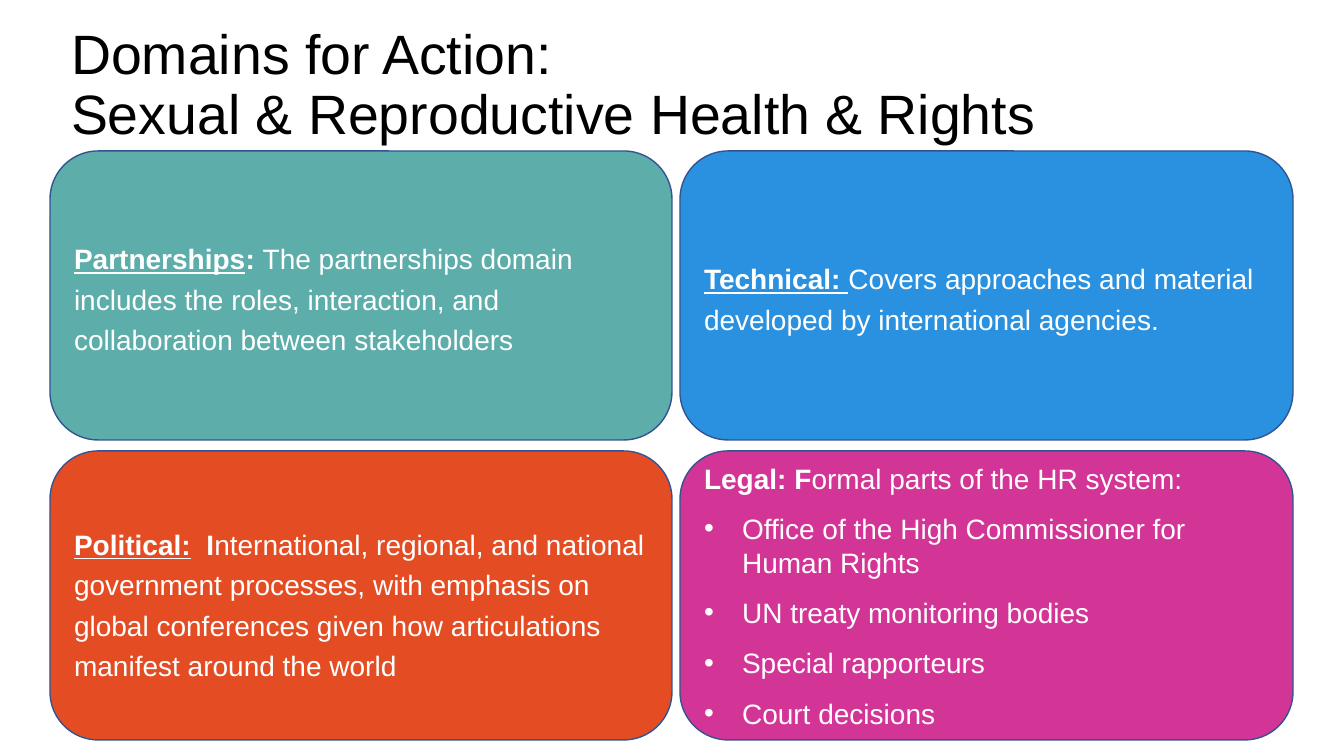
from lxml.etree import SubElement
from pptx import Presentation
from pptx.dml.color import RGBColor
from pptx.enum.shapes import MSO_SHAPE
from pptx.enum.text import MSO_ANCHOR, MSO_AUTO_SIZE, PP_ALIGN
from pptx.oxml.ns import qn
from pptx.util import Emu, Pt

PX = 914400 / 100.8
COLORS = {
    "black": "000000", "white": "FFFFFF", "edge": "325491",
    "teal": "5DADAB", "blue": "2991DF", "orange": "E44D24", "pink": "D33597",
}


def px(n):
    return Emu(round(n * PX))


def write(para, text, size=20, color="white", bold=False, under=False):
    run = para.add_run()
    run.text = text
    font = run.font
    font.name, font.size = "Arial", Pt(size)
    font.bold, font.underline = bold, under
    font.color.rgb = RGBColor.from_string(COLORS[color])


deck = Presentation()
deck.slide_width, deck.slide_height = px(1344), px(756)
slide = deck.slides.add_slide(deck.slide_layouts[5])

title = slide.shapes.title
title.left, title.top, title.width, title.height = px(61), px(16), px(1159), px(141)
frame = title.text_frame
frame.auto_size = MSO_AUTO_SIZE.NONE
frame.word_wrap = True
frame.vertical_anchor = MSO_ANCHOR.MIDDLE
head = frame.paragraphs[0]
head.alignment = PP_ALIGN.LEFT
head.line_spacing = 0.9
write(head, "Domains for Action: ", size=39.6, color="black")
head.add_line_break()
write(head, "Sexual & Reproductive Health & Rights", size=39.6, color="black")

# Each domain: fill, underlined lead, bold lead, plain text, bullets
domains = [
    ("teal", "Partnerships", ": ",
     "The partnerships domain includes the roles, interaction, "
     "and collaboration between stakeholders", []),
    ("blue", "Technical: ", "",
     "Covers approaches and material developed by international agencies.", []),
    ("orange", "Political:", "  I",
     "nternational, regional, and national government processes, with emphasis "
     "on global conferences given how articulations manifest around the world", []),
    ("pink", "", "Legal: F", "ormal parts of the HR system:",
     ["Office of the High Commissioner for Human Rights",
      "UN treaty monitoring bodies", "Special rapporteurs", "Court decisions"]),
]
cols = [(50, 622), (680, 613)]
TOP, HIGH, STEP = 151, 289, 300

for i, (fill, lead, bold, text, items) in enumerate(domains):
    row, col = divmod(i, 2)
    left, wide = cols[col]
    box = slide.shapes.add_shape(MSO_SHAPE.ROUNDED_RECTANGLE, px(left),
                                 px(TOP + row * STEP), px(wide), px(HIGH))
    box.shadow.inherit = False
    box.fill.solid()
    box.fill.fore_color.rgb = RGBColor.from_string(COLORS[fill])
    box.line.color.rgb = RGBColor.from_string(COLORS["edge"])
    box.line.width = Pt(1)
    frame = box.text_frame
    frame.word_wrap = True
    frame.vertical_anchor = MSO_ANCHOR.MIDDLE
    if fill == "orange":
        frame.margin_top = px(17)

    para = frame.paragraphs[0]
    para.alignment = PP_ALIGN.LEFT
    para.space_before = Pt(12 if items else 18)
    para.line_spacing = 1.0 if items else 1.2
    if lead:
        write(para, lead, bold=True, under=True)
    if bold:
        write(para, bold, bold=True)
    write(para, text)

    for item in items:
        para = frame.add_paragraph()
        para.alignment = PP_ALIGN.LEFT
        para.space_before = Pt(12)
        props = para._p.get_or_add_pPr()
        props.set("marL", str(px(38)))
        props.set("indent", str(-px(38)))
        SubElement(props, qn("a:buFont"), typeface="Arial")
        SubElement(props, qn("a:buChar"), char="•")
        write(para, item)

deck.save("out.pptx")
